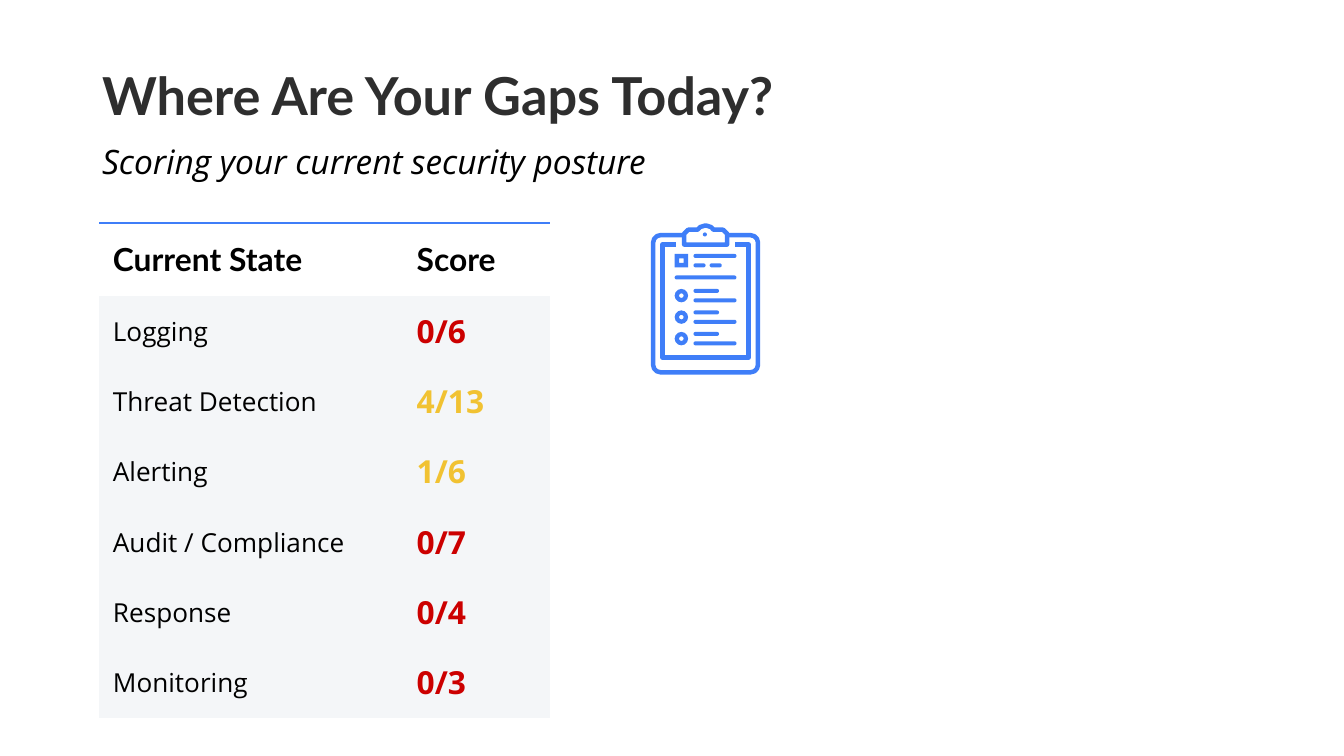
"""Build the security posture scorecard slide."""
from lxml import etree
from pptx import Presentation
from pptx.dml.color import RGBColor
from pptx.enum import shapes, text
from pptx.oxml import ns
from pptx.util import Inches, Pt

BLUE = RGBColor(0x3F, 0x7E, 0xF8)
DARK = RGBColor(0x2E, 0x2E, 0x2E)
BLACK = RGBColor(0, 0, 0)
WHITE = RGBColor(0xFF, 0xFF, 0xFF)
RED = RGBColor(0xCC, 0, 0)
YELLOW = RGBColor(0xF1, 0xC2, 0x32)
PALE = RGBColor(0xF4, 0xF6, 0xF8)


def format_text(frame, font_name, size, color, bold=False, italic=False):
    frame.paragraphs[0].alignment = text.PP_ALIGN.LEFT
    font = frame.paragraphs[0].runs[0].font
    font.name, font.size = font_name, Pt(size)
    font.bold, font.italic = bold, italic
    font.color.rgb = color


def paint(shape, fill=None, outlined=False):
    shape.shadow.inherit = False
    if fill is None:
        shape.fill.background()
    else:
        shape.fill.solid()
        shape.fill.fore_color.rgb = fill
    if outlined:
        shape.line.color.rgb = BLUE
        shape.line.width = Pt(2.4)
    else:
        shape.line.fill.background()


presentation = Presentation()
presentation.slide_width = Inches(10)
presentation.slide_height = Inches(10 * 9 / 16)
slide = presentation.slides.add_slide(presentation.slide_layouts[0])

title, subtitle = slide.placeholders
headings = [
    (title, "Where Are Your Gaps Today?", (0.66, 0.37, 7.25, 0.7)),
    (subtitle, "Scoring your current security posture", (0.66, 0.9, 7.9, 0.5)),
]
for shape, wording, box in headings:
    shape.left, shape.top, shape.width, shape.height = map(Inches, box)
    frame = shape.text_frame
    frame.text = wording
    frame.word_wrap = True
    frame.auto_size = text.MSO_AUTO_SIZE.NONE
    frame.vertical_anchor = text.MSO_ANCHOR.TOP
    frame.margin_left = frame.margin_right = Inches(0.1)
    frame.margin_top = frame.margin_bottom = Inches(0.1)
    frame.paragraphs[0].space_before = Pt(0)
format_text(title.text_frame, "Lato", 28, DARK, bold=True)
format_text(subtitle.text_frame, "Open Sans", 18, BLACK, italic=True)
subtitle.text_frame.paragraphs[0].line_spacing = 1.15

scores = [
    ("Current State", "Score", BLACK),
    ("Logging", "0/6", RED),
    ("Threat Detection", "4/13", YELLOW),
    ("Alerting", "1/6", YELLOW),
    ("Audit / Compliance", "0/7", RED),
    ("Response", "0/4", RED),
    ("Monitoring", "0/3", RED),
]
table_frame = slide.shapes.add_table(
    len(scores), 2, Inches(0.74), Inches(1.66), Inches(3.35), Inches(3.66))
table = table_frame.table
table.first_row = table.horz_banding = False
style_id = table_frame._element.find(".//" + ns.qn("a:tableStyleId"))
style_id.text = "{2D5ABB26-0587-4C30-8999-92F81FD0307C}"
table.columns[0].width, table.columns[1].width = Inches(2.26), Inches(1.09)

for row_index, (area, score, score_color) in enumerate(scores):
    header = row_index == 0
    table.rows[row_index].height = Inches(0.54 if header else 0.52)
    for column_index, wording in enumerate((area, score)):
        cell = table.cell(row_index, column_index)
        cell.text = wording
        cell.vertical_anchor = text.MSO_ANCHOR.MIDDLE
        cell.margin_left = cell.margin_right = Inches(0.1)
        cell.margin_top = cell.margin_bottom = Inches(0.1)
        strong = header or column_index == 1
        format_text(cell.text_frame, "Lato" if header else "Open Sans",
                    17 if strong else 14,
                    score_color if strong else BLACK, bold=strong)
        if header:
            cell.fill.background()
            border = etree.Element(ns.qn("a:lnT"), w=str(Pt(1.5)))
            fill = etree.SubElement(border, ns.qn("a:solidFill"))
            etree.SubElement(fill, ns.qn("a:srgbClr"), val=str(BLUE))
            cell._tc.get_or_add_tcPr().insert(0, border)
        else:
            cell.fill.solid()
            cell.fill.fore_color.rgb = PALE

clipboard = slide.shapes.add_group_shape().shapes
kinds = shapes.MSO_SHAPE

board = clipboard.add_shape(
    kinds.ROUNDED_RECTANGLE, Inches(4.86), Inches(1.75), Inches(0.78), Inches(1.02))
board.adjustments[0] = 0.07
paint(board, outlined=True)

center = 5.25
clip_half = [(5.09, 1.82), (5.09, 1.74), (5.12, 1.71), (5.19, 1.71), (5.21, 1.69), (5.24, 1.68)]
clip_points = clip_half + [(2 * center - x, y) for x, y in reversed(clip_half)]
paper_half = [(5.03, 1.82), (4.93, 1.82), (4.93, 2.66)]
paper_points = paper_half + [(2 * center - x, y) for x, y in reversed(paper_half)]
for points, closed, fill in ((clip_points, True, WHITE), (paper_points, False, None)):
    corners = [(Inches(x), Inches(y)) for x, y in points]
    builder = clipboard.build_freeform(*corners[0], scale=1.0)
    builder.add_line_segments(corners[1:], close=closed)
    paint(builder.convert_to_shape(), fill, outlined=True)

item_tops = [2.15, 2.31, 2.47]
marks = [(kinds.OVAL, 5.23, 1.73, 0.03, 0.03, None),
         (kinds.FRAME, 5.02, 1.89, 0.1, 0.1, 0.33)]
marks += [(kinds.DONUT, 5.02, top, 0.1, 0.1, 0.33) for top in item_tops]
bars = [(5.16, 1.89, 0.32), (5.16, 1.96, 0.09), (5.28, 1.96, 0.09), (5.02, 2.05, 0.46)]
for top in item_tops:
    bars += [(5.16, top, 0.19), (5.16, top + 0.07, 0.32)]
marks += [(kinds.ROUNDED_RECTANGLE, left, top, width, 0.03, 0.5) for left, top, width in bars]
for kind, left, top, width, height, adjustment in marks:
    mark = clipboard.add_shape(kind, Inches(left), Inches(top), Inches(width), Inches(height))
    if adjustment is not None:
        mark.adjustments[0] = adjustment
    paint(mark, BLUE)

presentation.save("out.pptx")
